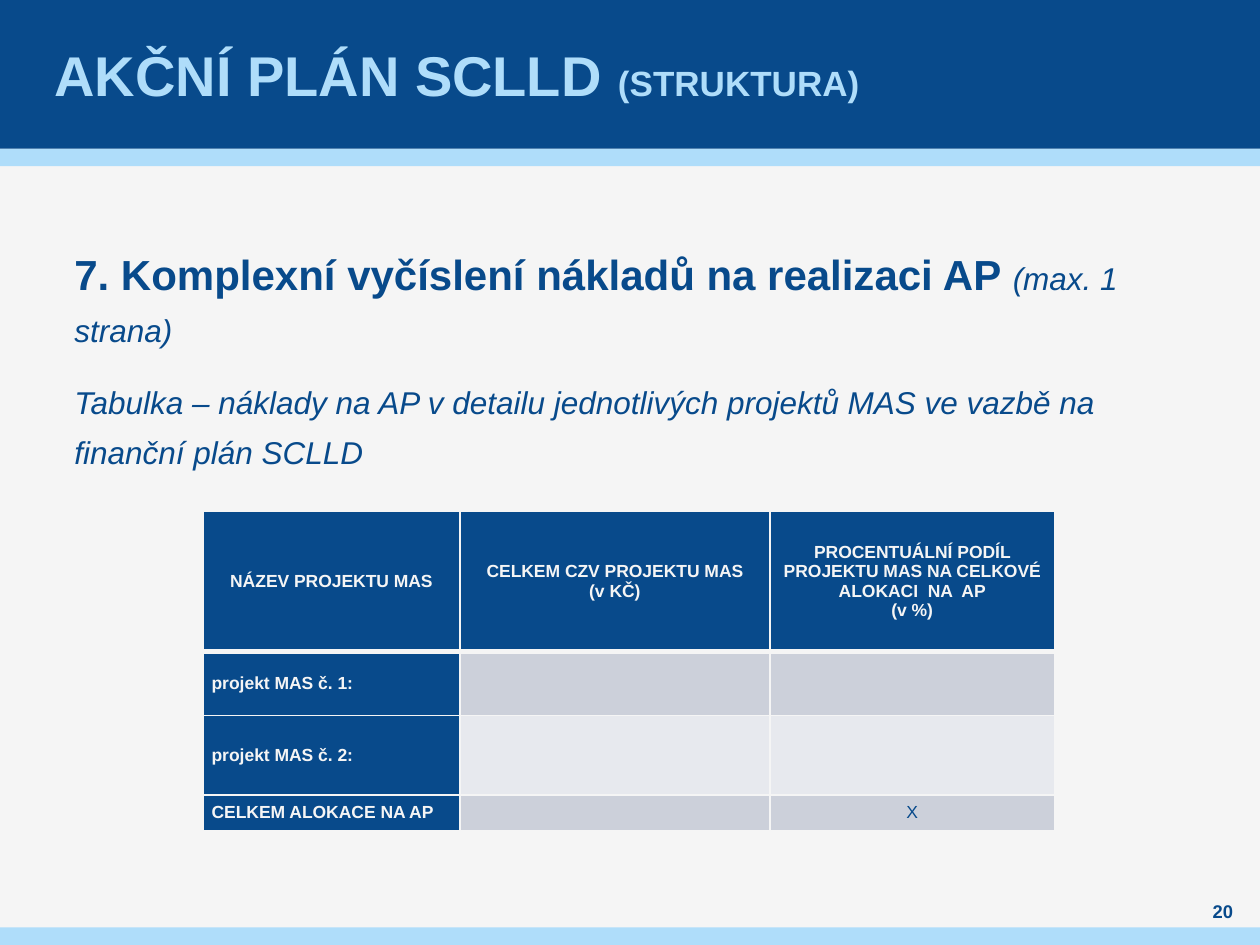
from dataclasses import dataclass
from itertools import product

from lxml.etree import SubElement
from pptx import Presentation
from pptx.dml.color import RGBColor
from pptx.enum.shapes import MSO_SHAPE
from pptx.enum.text import MSO_ANCHOR, MSO_AUTO_SIZE, PP_ALIGN
from pptx.oxml.ns import qn
from pptx.util import Inches, Pt


@dataclass(frozen=True)
class Theme:
    font: str = "Arial"
    navy: str = "084A8B"
    sky: str = "AFDDFA"
    paper: str = "F5F5F5"
    bands: tuple = ("CCD0DA", "E7E9EE")
    title: float = 32
    subtitle: float = 20
    heading: float = 24
    body: float = 18
    cell: float = 10
    number: float = 10.5
    leading: float = 28.8
    gap: float = 6


THEME = Theme()
WIDTH, HEIGHT = 10, 7.5
HEADER_HEIGHT = 1.18
STRIPE_HEIGHT = 0.14
COLUMNS = (2.04, 2.46, 2.26)
ROWS = (1.11, 0.51, 0.63, 0.28)
COSTS = (
    (
        "NÁZEV PROJEKTU MAS",
        "CELKEM CZV PROJEKTU MAS\n(v KČ)",
        "PROCENTUÁLNÍ PODÍL PROJEKTU MAS NA CELKOVÉ ALOKACI  NA  AP\n(v %)",
    ),
    ("projekt MAS č. 1:", "", ""),
    ("projekt MAS č. 2:", "", ""),
    ("CELKEM ALOKACE NA AP", "", "X"),
)


def rgb(color):
    return RGBColor.from_string(color)


def style(font, size, color=None, bold=None, italic=None):
    font.name, font.size = THEME.font, Pt(size)
    font.bold, font.italic = bold, italic
    if color:
        font.color.rgb = rgb(color)


def place(shape, box):
    shape.left, shape.top, shape.width, shape.height = map(Inches, box)


def set_frame(frame, anchor, side=0):
    frame.word_wrap = True
    frame.auto_size = MSO_AUTO_SIZE.NONE
    frame.vertical_anchor = anchor
    frame.margin_left = frame.margin_right = Inches(side)
    frame.margin_top = frame.margin_bottom = 0


def add_run(paragraph, text, size, color, bold=False, italic=False):
    run = paragraph.add_run()
    run.text = text
    style(run.font, size, color, bold, italic)


def add_band(slide, box, color):
    band = slide.shapes.add_shape(MSO_SHAPE.RECTANGLE, *map(Inches, box))
    band.shadow.inherit = False
    band.fill.solid()
    band.fill.fore_color.rgb = rgb(color)
    band.line.fill.background()


def add_bands(slide):
    add_band(slide, (0, HEADER_HEIGHT, WIDTH, STRIPE_HEIGHT), THEME.sky)
    add_band(slide, (0, 0, WIDTH, HEADER_HEIGHT), THEME.navy)
    add_band(slide, (0, HEIGHT - STRIPE_HEIGHT, WIDTH, STRIPE_HEIGHT), THEME.sky)


def fill_title(title, box):
    place(title, box)
    set_frame(title.text_frame, MSO_ANCHOR.MIDDLE, 0.04)
    heading = title.text_frame.paragraphs[0]
    heading.alignment = PP_ALIGN.LEFT
    add_run(heading, "AKČNÍ PLÁN SCLLD ", THEME.title, THEME.sky, bold=True)
    add_run(heading, "(STRUKTURA)", THEME.subtitle, THEME.sky, bold=True)


def fill_body(body, box):
    place(body, box)
    set_frame(body.text_frame, MSO_ANCHOR.TOP)
    chapter = body.text_frame.paragraphs[0]
    description = body.text_frame.add_paragraph()
    for paragraph, before in ((chapter, 0), (description, THEME.gap)):
        properties = paragraph._p.get_or_add_pPr()
        properties.set("marL", "0")
        properties.set("indent", "0")
        SubElement(properties, qn("a:buNone"))
        paragraph.line_spacing = Pt(THEME.leading)
        paragraph.space_before = Pt(before)
        paragraph.space_after = Pt(THEME.gap)
    add_run(chapter, "7. Komplexní vyčíslení nákladů na realizaci AP ",
            THEME.heading, THEME.navy, bold=True)
    add_run(chapter, "(max. 1 strana)", THEME.body, THEME.navy, italic=True)
    add_run(description, "Tabulka – náklady na AP v detailu jednotlivých projektů "
            "MAS ve vazbě na finanční plán SCLLD",
            THEME.body, THEME.navy, italic=True)


def add_borders(cell, bottom):
    properties = cell._tc.get_or_add_tcPr()
    widths = {"lnL": 1, "lnR": 1, "lnT": 1, "lnB": bottom}
    for index, (edge, width) in enumerate(widths.items()):
        line = properties.makeelement(qn(f"a:{edge}"), {"w": str(Pt(width))})
        fill = SubElement(line, qn("a:solidFill"))
        SubElement(fill, qn("a:srgbClr"), val=THEME.paper)
        properties.insert(index, line)


def fill_cell(cell, text, row, column):
    label = row == 0 or column == 0
    cell.fill.solid()
    cell.fill.fore_color.rgb = rgb(THEME.navy if label else THEME.bands[(row - 1) % 2])
    add_borders(cell, 1 if row else 3)
    cell.vertical_anchor = MSO_ANCHOR.MIDDLE
    cell.margin_left = cell.margin_right = Inches(0.07)
    cell.margin_top = cell.margin_bottom = 0
    cell.text = text
    for paragraph in cell.text_frame.paragraphs:
        paragraph.alignment = PP_ALIGN.CENTER if row == 0 or column else PP_ALIGN.LEFT
        style(paragraph.font, THEME.cell, THEME.paper if label else THEME.navy, label)
        if not text:
            SubElement(paragraph._p, qn("a:endParaRPr"), sz=str(THEME.cell * 100))


def add_cost_table(slide, left, top):
    box = (left, top, sum(COLUMNS), sum(ROWS))
    table = slide.shapes.add_table(len(ROWS), len(COLUMNS), *map(Inches, box)).table
    for column, width in zip(table.columns, COLUMNS):
        column.width = Inches(width)
    for row, height in zip(table.rows, ROWS):
        row.height = Inches(height)
    for row, column in product(range(len(ROWS)), range(len(COLUMNS))):
        fill_cell(table.cell(row, column), COSTS[row][column], row, column)


def add_page_number(slide, box):
    frame = slide.shapes.add_textbox(*map(Inches, box)).text_frame
    set_frame(frame, MSO_ANCHOR.MIDDLE)
    number = frame.paragraphs[0]
    number.text = "20"
    number.alignment = PP_ALIGN.CENTER
    style(number.font, THEME.number, THEME.navy, True)


def main():
    presentation = Presentation()
    presentation.slide_width, presentation.slide_height = Inches(WIDTH), Inches(HEIGHT)
    layout = presentation.slide_layouts[1]
    background = layout.slide_master.background.fill
    background.solid()
    background.fore_color.rgb = rgb(THEME.paper)
    slide = presentation.slides.add_slide(layout)
    title, body = slide.placeholders
    add_bands(slide)
    for placeholder in (title, body):
        slide.shapes._spTree.append(placeholder._element)
    fill_title(title, (0.39, 0, 9.21, HEADER_HEIGHT))
    fill_body(body, (0.59, 1.97, 8.82, 4.72))
    add_page_number(slide, (9.45, 7.13, 0.51, 0.2))
    add_cost_table(slide, 1.61, 4.06)
    presentation.save("out.pptx")


if __name__ == "__main__":
    main()
